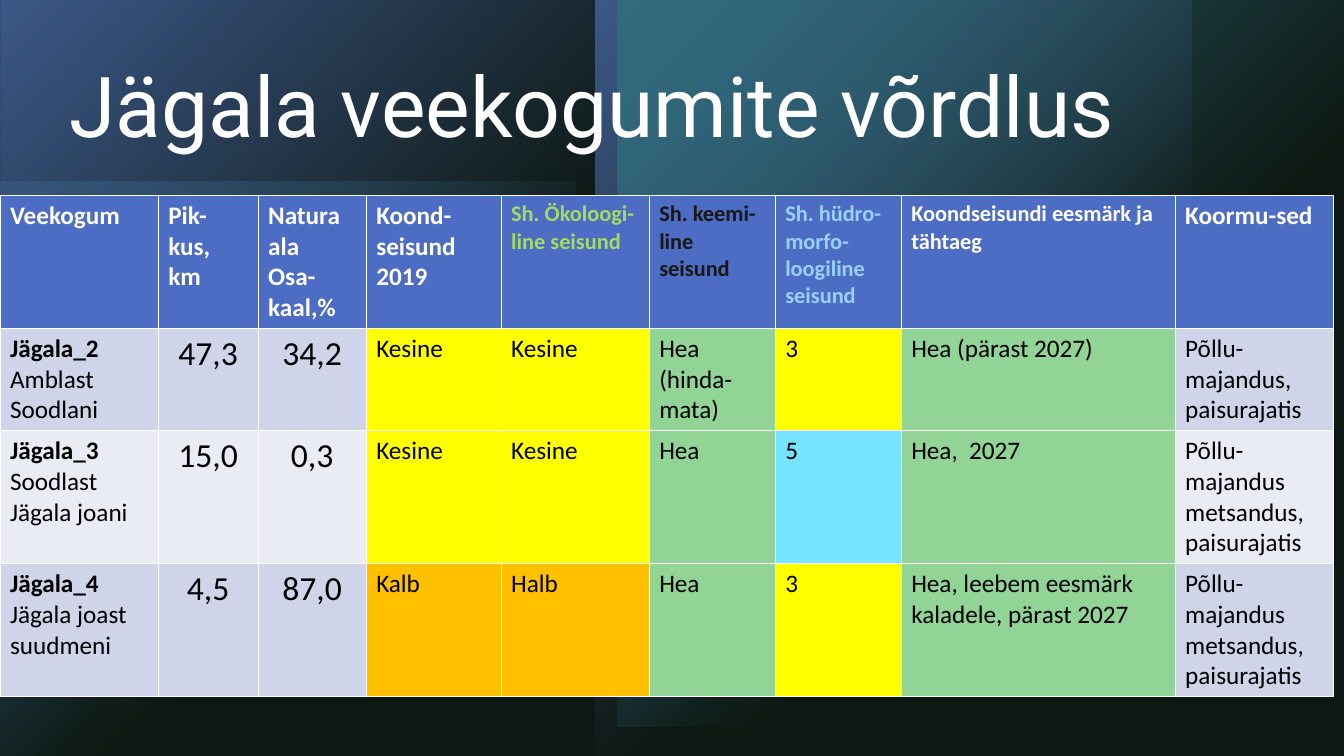
from dataclasses import dataclass

from lxml import etree
from pptx import Presentation
from pptx import util as u
from pptx.dml.color import RGBColor
from pptx.enum import shapes, text
from pptx.oxml import parse_xml
from pptx.oxml.ns import nsdecls, qn


@dataclass(frozen=True)
class Theme:
    background: str = "000000"
    blue: str = "4D6CC3"
    ocean: str = "3B8CB1"
    teal: str = "46B3A8"
    shade: str = "223C2E"
    white: str = "FFFFFF"
    black: str = "000000"
    ecology: str = "A0DC64"
    chemistry: str = "1A1814"
    morphology: str = "98D1FF"
    band: tuple = ("D0D4E9", "E9EBF5")
    moderate: str = "FFFF00"
    good: str = "91D495"
    high: str = "76E3FF"
    poor: str = "FFC000"
    title_font: str = "Roboto"
    table_font: str = "Calibri"
    title_size: int = 60
    figure_size: int = 24
    body_size: int = 18
    detail_size: int = 16


class SlideBuilder:
    def __init__(self, slide, theme):
        self.slide = slide
        self.theme = theme
        fill = slide.background.fill
        fill.solid()
        fill.fore_color.rgb = RGBColor.from_string(theme.background)

    def panel(self, box, kind=shapes.MSO_SHAPE.RECTANGLE, rotation=0, flip=""):
        panel = self.slide.shapes.add_shape(kind, *map(u.Pt, box))
        panel.shadow.inherit = False
        panel.line.fill.background()
        panel.rotation = rotation
        for axis in flip:
            panel._element.spPr.xfrm.set("flip" + axis, "1")
        return panel

    def tint(self, box, color, opacity, soft_edge=0, **placing):
        """Add a see-through panel, its rim faded over soft_edge points."""
        panel = self.panel(box, **placing)
        panel.fill.solid()
        panel.fill.fore_color.rgb = RGBColor.from_string(color)
        properties = panel._element.spPr
        rgb = properties.find(".//" + qn("a:srgbClr"))
        etree.SubElement(rgb, qn("a:alpha"), val=str(opacity * 1000))
        if soft_edge:
            effects = properties.find(qn("a:effectLst"))
            etree.SubElement(effects, qn("a:softEdge"), rad=str(u.Pt(soft_edge)))

    def glow(self, box, color, opacity=100, **placing):
        """Add a panel whose colour fades out from one corner."""
        panel = self.panel(box, **placing)
        panel.fill.background()
        stops = "".join(
            f'<a:gs pos="{position * 1000}"><a:srgbClr val="{color}">'
            f'<a:alpha val="{alpha * 1000}"/></a:srgbClr></a:gs>'
            for position, alpha in ((0, opacity), (60, 0)))
        gradient = parse_xml(
            f'<a:gradFill {nsdecls("a")} rotWithShape="1"><a:gsLst>{stops}</a:gsLst>'
            '<a:path path="circle"><a:fillToRect r="100000" b="100000"/></a:path>'
            '</a:gradFill>')
        properties = panel._element.spPr
        properties.replace(properties.find(qn("a:noFill")), gradient)

    def style(self, paragraph, font, size, color, bold=False):
        paragraph.font.name = font
        paragraph.font.size = u.Pt(size)
        paragraph.font.bold = bold
        paragraph.font.color.rgb = RGBColor.from_string(color)

    def title(self, box, wording):
        frame = self.slide.shapes.add_textbox(*map(u.Pt, box)).text_frame
        frame.word_wrap = True
        frame.vertical_anchor = text.MSO_ANCHOR.TOP
        heading = frame.paragraphs[0]
        heading.text = wording
        heading.line_spacing = 0.9
        self.style(heading, self.theme.title_font, self.theme.title_size, self.theme.white)

    def table(self, left, top, widths, heights, header, records):
        theme = self.theme
        table = self.slide.shapes.add_table(
            len(heights), len(widths), u.Pt(left), u.Pt(top),
            u.Pt(sum(widths)), u.Pt(sum(heights))).table
        for column, width in zip(table.columns, widths):
            column.width = u.Pt(width)
        for row, height in zip(table.rows, heights):
            row.height = u.Pt(height)
        for column, (label, size, color) in enumerate(header):
            self.cell(table.cell(0, column), label, theme.blue, size, color, bold=True)
        for row, (values, ratings) in enumerate(records, 1):
            band = theme.band[(row - 1) % 2]
            fills = [band] * 3 + ratings + [band]
            for column, (value, fill) in enumerate(zip(values, fills)):
                is_figure = column in (1, 2)
                size = theme.figure_size if is_figure else theme.body_size
                cell = table.cell(row, column)
                self.cell(cell, value, fill, size, theme.black, centered=is_figure)
            table.cell(row, 0).text_frame.paragraphs[0].font.bold = True

    def cell(self, cell, wording, fill, size, color, bold=False, centered=False):
        cell.fill.solid()
        cell.fill.fore_color.rgb = RGBColor.from_string(fill)
        cell.text = wording
        for paragraph in cell.text_frame.paragraphs:
            self.style(paragraph, self.theme.table_font, size, color, bold)
            if centered:
                paragraph.alignment = text.PP_ALIGN.CENTER


def main():
    deck = Presentation()
    deck.slide_width, deck.slide_height = u.Pt(960), u.Pt(540)
    theme = Theme()
    builder = SlideBuilder(deck.slides.add_slide(deck.slide_layouts[6]), theme)

    oval = shapes.MSO_SHAPE.OVAL
    builder.glow((0, 129.6, 411, 411), theme.ocean, opacity=60, flip="V")
    builder.tint((453, 31, 340, 340), theme.teal, 60, soft_edge=127, kind=oval, flip="V")
    builder.tint((0, 40, 500, 500), theme.teal, 20, soft_edge=127, kind=oval, flip="V")
    builder.glow((0, 0, 425.5, 540), theme.blue, rotation=180, flip="V")
    builder.glow((425.5, 0, 425.5, 540), theme.blue, rotation=180, flip="HV")
    builder.glow((441, 0, 519, 519), theme.ocean, rotation=180, flip="V")
    builder.tint((0, 0, 960, 540), theme.shade, 40)

    builder.title((42.5, 42.5, 874, 142.5), "Jägala veekogumite võrdlus")

    large, small = theme.body_size, theme.detail_size
    header = [
        ("Veekogum", large, theme.white),
        ("Pik-kus, km", large, theme.white),
        ("Natura ala\nOsa-kaal,%", large, theme.white),
        ("Koond-seisund 2019", large, theme.white),
        ("Sh. Ökoloogi-line seisund", small, theme.ecology),
        ("Sh. keemi-line seisund", small, theme.chemistry),
        ("Sh. hüdro-morfo-loogiline seisund", small, theme.morphology),
        ("Koondseisundi eesmärk ja tähtaeg", small, theme.white),
        ("Koormu-sed", large, theme.white),
    ]
    moderate, good, high, poor = theme.moderate, theme.good, theme.high, theme.poor
    forestry = "Põllu-majandus metsandus, paisurajatis"
    records = [
        (("Jägala_2\nAmblast Soodlani", "47,3", "34,2", "Kesine", "Kesine",
          "Hea (hinda-mata)", "3", "Hea (pärast 2027)",
          "Põllu-majandus, paisurajatis"),
         [moderate, moderate, good, moderate, good]),
        (("Jägala_3\nSoodlast Jägala joani", "15,0", "0,3", "Kesine", "Kesine",
          "Hea", "5", "Hea,  2027", forestry),
         [moderate, moderate, good, high, good]),
        (("Jägala_4\nJägala joast suudmeni", "4,5", "87,0", "Kalb", "Halb",
          "Hea", "3", "Hea, leebem eesmärk kaladele, pärast 2027", forestry),
         [poor, poor, good, moderate, good]),
    ]
    widths = [113, 71.4, 77.2, 96.4, 105.8, 90, 90, 195.7, 113]
    builder.table(0, 139.5, widths, [95, 73, 95, 95], header, records)

    deck.save("out.pptx")


if __name__ == "__main__":
    main()
